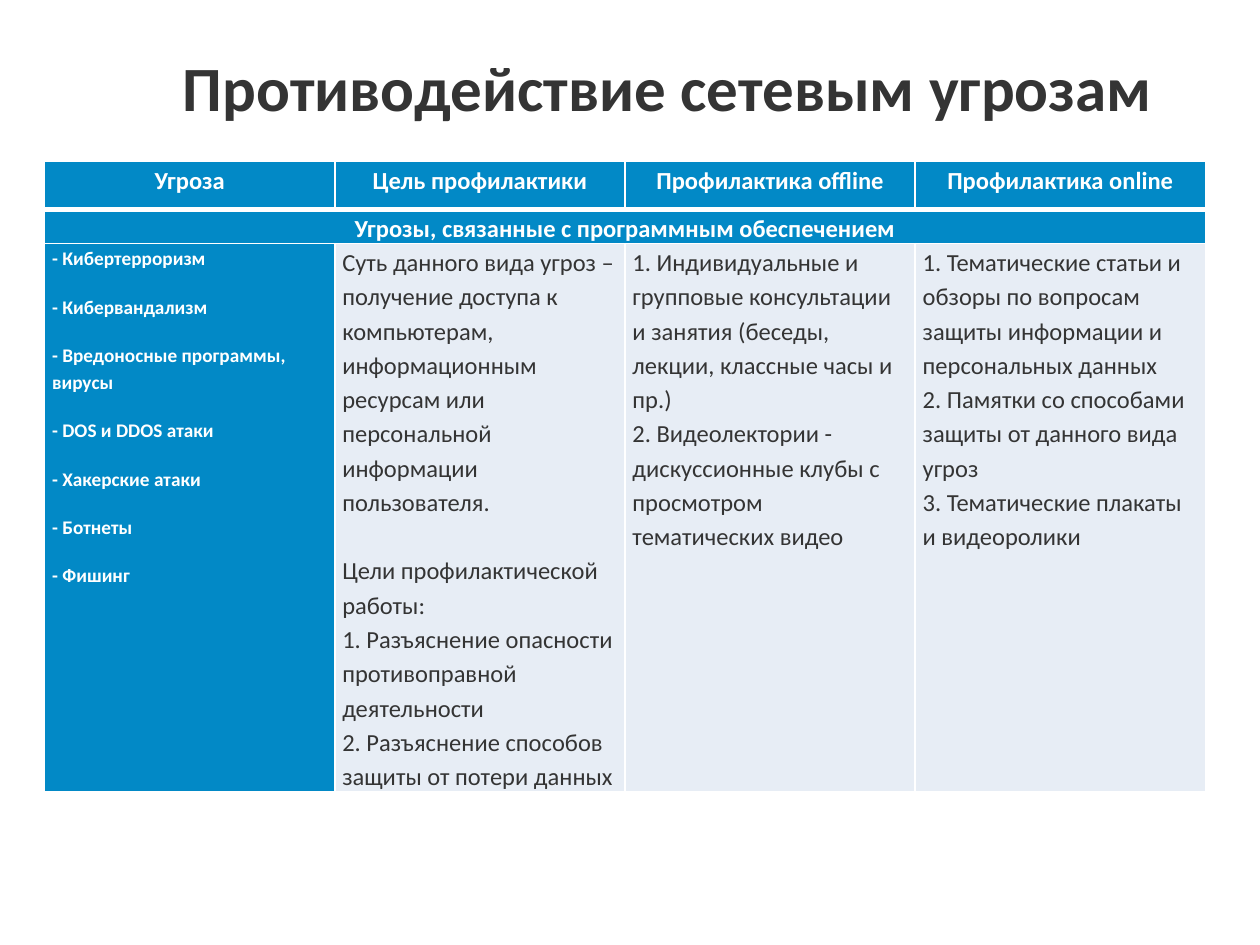
from dataclasses import dataclass

from lxml.etree import SubElement as Sub
from pptx import Presentation
from pptx.dml.color import RGBColor as Rgb
from pptx.enum.text import MSO_ANCHOR as Anchor, PP_ALIGN as Align
from pptx.oxml.ns import qn
from pptx.util import Cm, Pt

HEX = {"blue": "0289C6", "pale": "E7EDF5", "dark": "343434", "white": "FFFFFF"}


@dataclass
class Look:
    fill: str
    ink: str
    size: int
    bold: bool
    align: Align = Align.LEFT
    before: float = 0
    after: float = 0


@dataclass
class Entry:
    row: int
    col: int
    look: Look
    lines: list[str]
    gaps: tuple[int, ...] = ()  # paragraphs set apart by one line


HEAD = Look("blue", "white", 14, True, Align.CENTER)
RISK = Look("blue", "white", 11, True, before=6, after=6)
BODY = Look("pale", "dark", 14, False)
LINE = 19.6  # height of one body line, points

TITLES = ["Угроза", "Цель профилактики", "Профилактика offline", "Профилактика online"]
ENTRIES = [Entry(0, col, HEAD, [text]) for col, text in enumerate(TITLES)] + [
    Entry(1, 0, HEAD, ["Угрозы, связанные с программным обеспечением"]),
    Entry(2, 0, RISK, [
        "- Кибертерроризм",
        "- Кибервандализм",
        "- Вредоносные программы, вирусы",
        "- DOS и DDOS атаки",
        "- Хакерские атаки",
        "- Ботнеты",
        "- Фишинг",
    ]),
    Entry(2, 1, BODY, [
        "Суть данного вида угроз – получение доступа к компьютерам, "
        "информационным ресурсам или персональной информации пользователя.",
        "Цели профилактической работы:",
        "1. Разъяснение опасности противоправной деятельности",
        "2. Разъяснение способов защиты от потери данных",
    ], gaps=(1,)),
    Entry(2, 2, BODY, [
        "1. Индивидуальные и групповые консультации и занятия "
        "(беседы, лекции, классные часы и пр.)",
        "2. Видеолектории - дискуссионные клубы с просмотром тематических видео",
    ]),
    Entry(2, 3, BODY, [
        "1. Тематические статьи и обзоры по вопросам защиты информации "
        "и персональных данных",
        "2. Памятки со способами защиты от данного вида угроз",
        "3. Тематические плакаты и видеоролики",
    ]),
]


def put(item, values: dict) -> None:
    for name, value in values.items():
        setattr(item, name, value)


def style(font, size: int, ink: str, bold: bool) -> None:
    put(font, {"name": "Calibri", "size": Pt(size), "bold": bold})
    font.color.rgb = Rgb.from_string(HEX[ink])


def edge(cell, row: int) -> None:
    """Draw white borders, thicker under the header row."""
    props = cell._tc.get_or_add_tcPr()
    thick = {0: "lnB", 1: "lnT"}.get(row)
    for side in ("lnL", "lnR", "lnT", "lnB"):
        width = Pt(3 if side == thick else 1)
        line = Sub(props, qn(f"a:{side}"), w=str(width))
        paint = Sub(line, qn("a:solidFill"))
        Sub(paint, qn("a:srgbClr"), val=HEX["white"])


def write(cell, entry: Entry) -> None:
    look = entry.look
    cell.fill.solid()
    cell.fill.fore_color.rgb = Rgb.from_string(HEX[look.fill])
    frame = cell.text_frame
    frame.text = "\n".join(entry.lines)
    for num, para in enumerate(frame.paragraphs):
        before = LINE if num in entry.gaps else look.before
        put(para, {
            "alignment": look.align,
            "line_spacing": 1.15,
            "space_before": Pt(before if num else 0),
            "space_after": Pt(look.after),
        })
        style(para.runs[0].font, look.size, look.ink, look.bold)


def main() -> None:
    deck = Presentation()
    put(deck, {"slide_width": Cm(25.4), "slide_height": Cm(19.05)})
    slide = deck.slides.add_slide(deck.slide_layouts[5])

    # Title
    title = slide.shapes.title
    put(title, {"left": Cm(3.3), "top": Cm(0.74), "width": Cm(20.32), "height": Cm(1.98)})
    title.text_frame.text = "Противодействие сетевым угрозам"
    title.text_frame.vertical_anchor = Anchor.MIDDLE
    para = title.text_frame.paragraphs[0]
    para.alignment = Align.CENTER
    style(para.runs[0].font, 36, "dark", True)

    # Table grid
    rows = [0.97, 0.53, 11.05]
    table = slide.shapes.add_table(
        len(rows), len(TITLES), Cm(0.9), Cm(3.25), Cm(23.4), Cm(sum(rows))
    ).table
    for row, high in zip(table.rows, rows):
        row.height = Cm(high)
    for num in range(len(rows)):
        for col in range(len(TITLES)):
            cell = table.cell(num, col)
            put(cell, {
                "margin_left": Cm(0.15), "margin_right": Cm(0.15),
                "margin_top": 0, "margin_bottom": 0,
            })
            edge(cell, num)
    table.cell(1, 0).merge(table.cell(1, len(TITLES) - 1))

    # Table text
    for entry in ENTRIES:
        write(table.cell(entry.row, entry.col), entry)

    deck.save("out.pptx")


if __name__ == "__main__":
    main()
